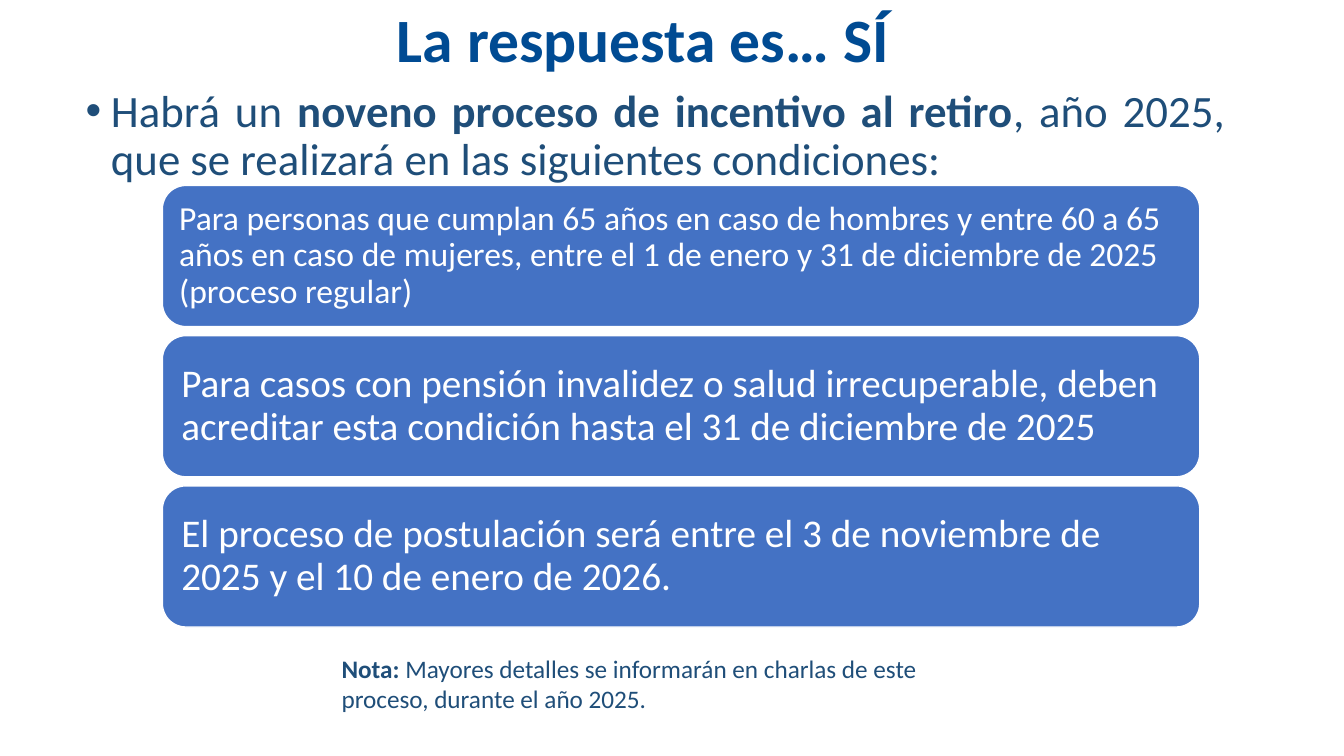
from dataclasses import dataclass

from lxml import etree
from pptx import Presentation
from pptx.dml.color import RGBColor
from pptx.enum.shapes import MSO_SHAPE
from pptx.enum.text import MSO_ANCHOR, MSO_AUTO_SIZE, PP_ALIGN
from pptx.oxml.ns import qn
from pptx.util import Inches, Pt

ROUNDED = MSO_SHAPE.ROUNDED_RECTANGLE
TOP, MIDDLE = MSO_ANCHOR.TOP, MSO_ANCHOR.MIDDLE
NO_FIT = MSO_AUTO_SIZE.NONE
LEFT, CENTER, JUSTIFY = PP_ALIGN.LEFT, PP_ALIGN.CENTER, PP_ALIGN.JUSTIFY


@dataclass(frozen=True)
class Theme:
    font: str = "Calibri"
    title: RGBColor = RGBColor.from_string("004B93")
    text: RGBColor = RGBColor.from_string("1F4E79")
    card: RGBColor = RGBColor.from_string("4472C4")
    white: RGBColor = RGBColor.from_string("FFFFFF")
    title_size: int = 44
    body_size: int = 32
    card_size: int = 28
    small_card_size: int = 24
    note_size: int = 18
    spacing: float = 0.9


class Deck:
    def __init__(self, theme):
        self.theme = theme
        self.prs = Presentation()
        self.prs.slide_width, self.prs.slide_height = Inches(13.33), Inches(7.5)
        self.s = self.prs.slides.add_slide(self.prs.slide_layouts[1])

    def box(self, left, top, width, height):
        w, h = self.prs.slide_width, self.prs.slide_height
        return [int(share * side / 100) for share, side in
                ((left, w), (top, h), (width, w), (height, h))]

    def place(self, sp, area):
        sp.left, sp.top, sp.width, sp.height = self.box(*area)

    def fill_text(self, tf, runs, size, color, align=LEFT, anchor=TOP, spacing=None):
        tf.word_wrap = True
        tf.auto_size = NO_FIT
        tf.vertical_anchor = anchor
        p = tf.paragraphs[0]
        p.alignment = align
        p.line_spacing = spacing
        p.space_before = Pt(0)
        for text, bold in runs:
            r = p.add_run()
            r.text = text
            r.font.name = self.theme.font
            r.font.size = Pt(size)
            r.font.bold = bold
            r.font.color.rgb = color
        return p

    def title(self, text, area):
        t, sp = self.theme, self.s.shapes.title
        self.place(sp, area)
        self.fill_text(sp.text_frame, [(text, True)], t.title_size, t.title,
                       CENTER, MIDDLE, t.spacing)

    def bullet(self, runs, area):
        t, sp = self.theme, self.s.placeholders[1]
        self.place(sp, area)
        p = self.fill_text(sp.text_frame, runs, t.body_size, t.text, JUSTIFY,
                           spacing=t.spacing)
        pPr = p._p.get_or_add_pPr()
        pPr.set("marL", str(Inches(0.25)))
        pPr.set("indent", str(-Inches(0.25)))
        etree.SubElement(pPr, qn("a:buFont")).set("typeface", "Arial")
        etree.SubElement(pPr, qn("a:buChar")).set("char", "•")

    def card(self, text, size, inset, area):
        t = self.theme
        sp = self.s.shapes.add_shape(ROUNDED, *self.box(*area))
        sp.shadow.inherit = False
        sp.fill.solid()
        sp.fill.fore_color.rgb = t.card
        sp.line.color.rgb = t.white
        sp.line.width = Pt(1)
        tf = sp.text_frame
        tf.margin_left = tf.margin_right = Inches(inset)
        tf.margin_top = tf.margin_bottom = Inches(inset)
        self.fill_text(tf, [(text, False)], size, t.white, LEFT, MIDDLE, t.spacing)

    def note(self, runs, area):
        t = self.theme
        sp = self.s.shapes.add_textbox(*self.box(*area))
        self.fill_text(sp.text_frame, runs, t.note_size, t.text)


def main():
    theme = Theme()
    deck = Deck(theme)
    deck.title("La respuesta es… SÍ", (4.73, 0.13, 86.27, 10.93))
    deck.bullet([
        ("Habrá un ", False),
        ("noveno proceso de incentivo al retiro", True),
        (", año 2025, que se realizará en las siguientes condiciones:", False),
    ], (5.63, 11.07, 86.27, 63.47))
    conditions = [
        ("Para personas que cumplan 65 años en caso de hombres y entre 60 a 65 "
         "años en caso de mujeres, entre el 1 de enero y 31 de diciembre de 2025 "
         "(proceso regular)", theme.small_card_size, 0.1),
        ("Para casos con pensión invalidez o salud irrecuperable, deben acreditar "
         "esta condición hasta el 31 de diciembre de 2025", theme.card_size, 0.12),
        ("El proceso de postulación será entre el 3 de noviembre de 2025 y el 10 "
         "de enero de 2026.", theme.card_size, 0.12),
    ]
    for row, (text, size, inset) in enumerate(conditions):
        deck.card(text, size, inset, (12.08, 24.53 + row * 19.87, 77.19, 18.67))
    deck.note([
        ("Nota: ", True),
        ("Mayores detalles se informarán en charlas de este proceso, durante el "
         "año 2025.", False),
    ], (24.68, 85.73, 49.59, 9.47))
    deck.prs.save("out.pptx")


if __name__ == "__main__":
    main()
